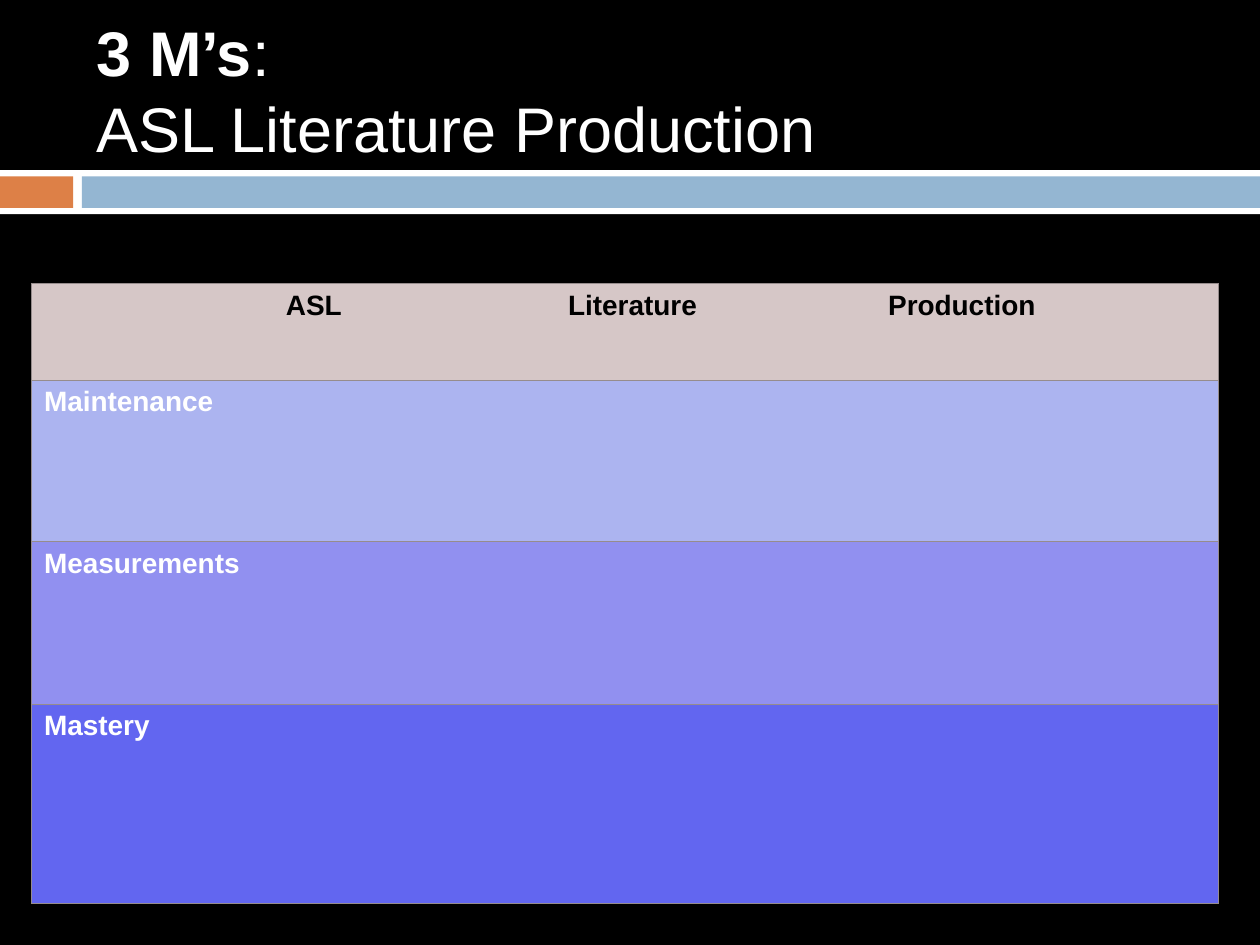
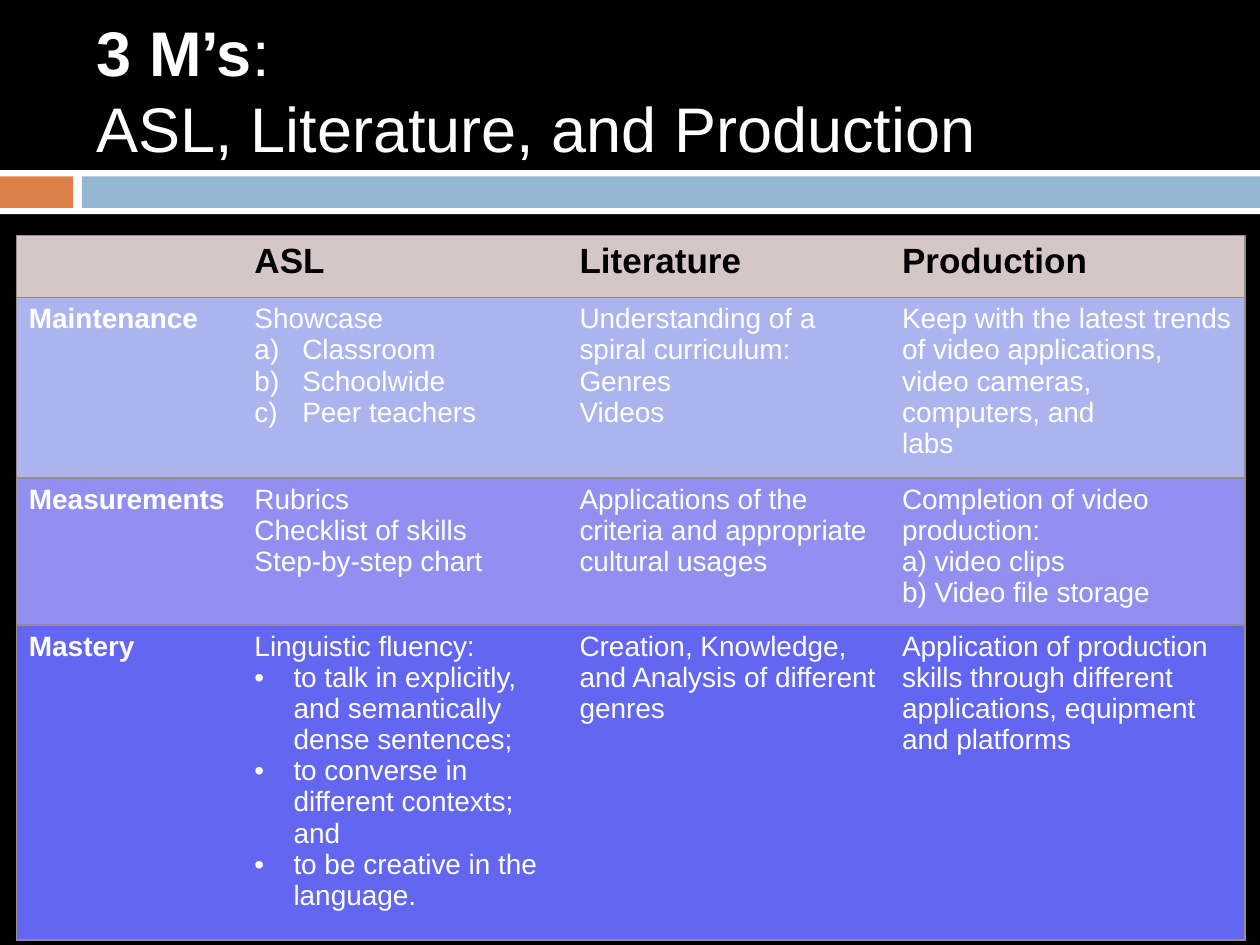
from lxml import etree
from pptx import Presentation
from pptx.dml.color import RGBColor
from pptx.enum.shapes import MSO_SHAPE
from pptx.enum.text import MSO_ANCHOR
from pptx.oxml.ns import qn
from pptx.util import Inches, Pt

RECT = MSO_SHAPE.RECTANGLE
MIDDLE = MSO_ANCHOR.MIDDLE

LETTER, DOT = "letter", "dot"
HEADINGS = ["", "ASL", "Literature", "Production"]
STAGES = ["Maintenance", "Measurements", "Mastery"]

# Each cell is a list of lines; a listed line is a (list kind, text) pair.
DETAILS = [
    [
        ["Showcase", (LETTER, "Classroom"), (LETTER, "Schoolwide"),
         (LETTER, "Peer teachers")],
        ["Understanding of a", "spiral curriculum:", "Genres", "Videos"],
        ["Keep with the latest trends of video applications, video cameras, "
         "computers, and", "labs"],
    ],
    [
        ["Rubrics", "Checklist of skills", "Step-by-step chart"],
        ["Applications of the criteria and appropriate cultural usages"],
        ["Completion of video production:", "a) video clips",
         "b) Video file storage"],
    ],
    [
        ["Linguistic fluency:",
         (DOT, "to talk in explicitly, and semantically dense sentences;"),
         (DOT, "to converse in different contexts; and"),
         (DOT, "to be creative in the language.")],
        ["Creation, Knowledge, and Analysis of different genres"],
        ["Application of production skills through different applications, "
         "equipment and platforms"],
    ],
]
NO_DETAILS = [[[] for _ in HEADINGS[1:]] for _ in STAGES]

SLIDES = [
    {"title": "ASL Literature Production", "details": NO_DETAILS,
     "origin": (0.25, 2.25), "heading_size": 16,
     "cols": [1.92, 2.24, 2.54, 2.72], "rows": [0.77, 1.28, 1.29, 1.58]},
    {"title": "ASL, Literature, and Production", "details": DETAILS,
     "origin": (0.13, 1.87), "heading_size": 20,
     "cols": [1.79, 2.58, 2.56, 2.82], "rows": [0.49, 1.34, 1.09, 2.33]},
]

THEME = {
    "font": "Arial",
    "background": "000000",
    "title": "FFFFFF",
    "title_size": 36,
    "body_size": 16,
    "heading_text": "000000",
    "body_text": "FFFFFF",
    "border": "968C8C",
    "border_width": 1,
    "row_fills": ["D6C7C7", "ACB4F0", "9190F0", "6266F0"],
}
BANDS = [
    ((0, 1.35, 10, 0.35), "FFFFFF"),
    ((0, 1.4, 0.58, 0.25), "DD8047"),
    ((0.65, 1.4, 9.35, 0.25), "94B6D2"),
]
TITLE_BOX = (0.67, 0.17, 8.92, 1.08)
LISTS = {
    LETTER: (0.38, "a:buAutoNum", {"type": "alphaLcParenR"}),
    DOT: (0.31, "a:buChar", {"char": "•"}),
}


def rgb(value):
    return RGBColor.from_string(value)


def add_run(p, text, size, color, bold):
    r = p.add_run()
    r.text = text
    r.font.color.rgb = rgb(color)
    style = {"name": THEME["font"], "size": Pt(size), "bold": bold}
    for name, value in style.items():
        setattr(r.font, name, value)


def add_bands(s):
    for box, color in BANDS:
        sp = s.shapes.add_shape(RECT, *map(Inches, box))
        sp.shadow.inherit = False
        sp.fill.solid()
        sp.fill.fore_color.rgb = rgb(color)
        sp.line.fill.background()


def add_title(s, subject):
    tf = s.shapes.add_textbox(*map(Inches, TITLE_BOX)).text_frame
    tf.word_wrap = True
    tf.vertical_anchor = MIDDLE
    p = tf.paragraphs[0]
    look = THEME["title_size"], THEME["title"]
    add_run(p, "3 M’s", *look, True)
    add_run(p, ":", *look, False)
    p.add_line_break()
    add_run(p, subject, *look, False)


def set_list(p, kind):
    """Give a paragraph its hanging indent and its letter or dot."""
    indent, tag, attributes = LISTS[kind]
    pPr = p._p.get_or_add_pPr()
    pPr.set("marL", str(Inches(indent)))
    pPr.set("indent", str(-Inches(indent)))
    etree.SubElement(pPr, qn("a:buFont"), typeface=THEME["font"])
    etree.SubElement(pPr, qn(tag), attributes)


def set_borders(cell, drawn):
    """Draw the named sides (L, R, T, B) and clear the others."""
    tcPr = cell._tc.get_or_add_tcPr()
    for side in "LRTB":
        ln = etree.SubElement(tcPr, qn("a:ln" + side),
                              w=str(Pt(THEME["border_width"])))
        if side in drawn:
            fill = etree.SubElement(ln, qn("a:solidFill"))
            etree.SubElement(fill, qn("a:srgbClr"), val=THEME["border"])
        else:
            etree.SubElement(ln, qn("a:noFill"))


def fill_cell(cell, lines, size, color, bold):
    tf = cell.text_frame
    for i, line in enumerate(lines):
        p = tf.add_paragraph() if i else tf.paragraphs[0]
        kind, text = line if isinstance(line, tuple) else (None, line)
        if kind:
            set_list(p, kind)
        if text:
            add_run(p, text, size, color, bold)


def add_grid(s, slide):
    cols, rows = slide["cols"], slide["rows"]
    box = (*slide["origin"], sum(cols), sum(rows))
    table = s.shapes.add_table(len(rows), len(cols),
                               *map(Inches, box)).table
    table.horz_banding = False
    for col, width in zip(table.columns, cols):
        col.width = Inches(width)
    for row, height in zip(table.rows, rows):
        row.height = Inches(height)

    content = [[[heading] for heading in HEADINGS]]
    content += [[[stage], *cells]
                for stage, cells in zip(STAGES, slide["details"])]
    for i, (row, fill) in enumerate(zip(content, THEME["row_fills"])):
        size = THEME["body_size"] if i else slide["heading_size"]
        color = THEME["body_text"] if i else THEME["heading_text"]
        for j, lines in enumerate(row):
            cell = table.cell(i, j)
            ends = {0: "L", len(cols) - 1: "R"}
            set_borders(cell, "TB" + ends.get(j, ""))
            cell.fill.solid()
            cell.fill.fore_color.rgb = rgb(fill)
            fill_cell(cell, lines, size, color, i == 0 or j == 0)


def main():
    prs = Presentation()
    prs.slide_width, prs.slide_height = Inches(10), Inches(7.5)
    for slide in SLIDES:
        s = prs.slides.add_slide(prs.slide_layouts[6])
        s.background.fill.solid()
        s.background.fill.fore_color.rgb = rgb(THEME["background"])
        add_bands(s)
        add_title(s, slide["title"])
        add_grid(s, slide)
    prs.save("out.pptx")


if __name__ == "__main__":
    main()
